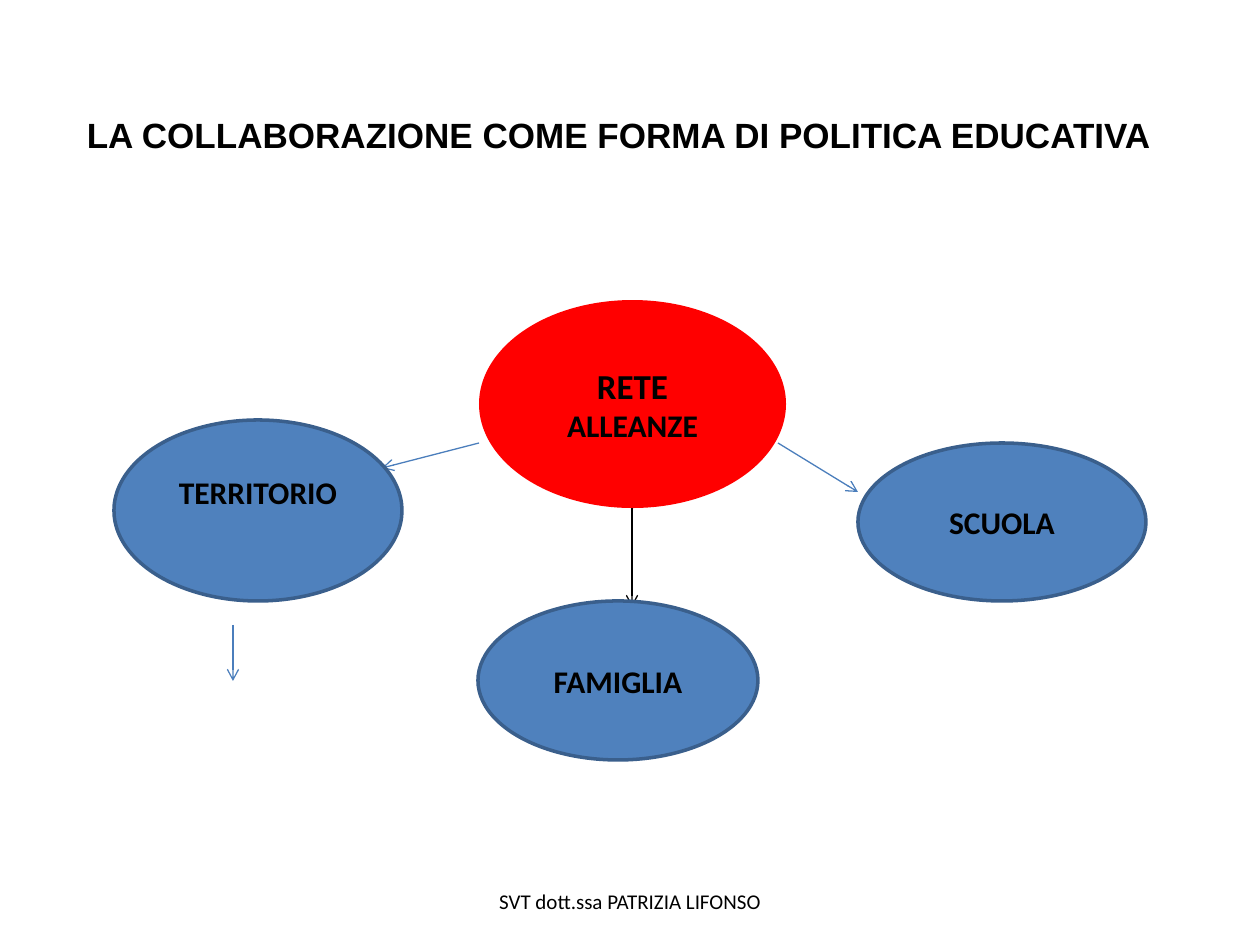
from lxml.etree import SubElement
from pptx import Presentation
from pptx.dml.color import RGBColor
from pptx.enum.shapes import MSO_CONNECTOR as Connector, MSO_SHAPE as Shape
from pptx.enum.text import MSO_ANCHOR as Anchor, PP_ALIGN as Align
from pptx.oxml.ns import qn
from pptx.util import Pt

EMU_PER_PX = 914400 / 126
BLACK = RGBColor(0x00, 0x00, 0x00)
RED = RGBColor(0xFF, 0x00, 0x00)
BLUE = RGBColor(0x4F, 0x81, 0xBD)
DARK_BLUE = RGBColor(0x3A, 0x5F, 0x8C)
ARROW_BLUE = RGBColor(0x4B, 0x7E, 0xBC)


def px(length):
    return round(length * EMU_PER_PX)


class AllianceSlide:
    body = {"name": "Calibri", "size": Pt(18), "bold": True}
    heading = {"name": "Arial", "size": Pt(20), "bold": True}
    footer = {"name": "Calibri", "size": Pt(12), "bold": False}

    def __init__(self, slide):
        self.shapes = slide.shapes

    def set_text(self, frame, runs, bottom_inset=6):
        """Fill a frame with one centred paragraph of (text, format) runs."""
        layout = {"word_wrap": True, "vertical_anchor": Anchor.MIDDLE,
                  "margin_bottom": px(bottom_inset)}
        for key, value in layout.items():
            setattr(frame, key, value)
        paragraph = frame.paragraphs[0]
        paragraph.alignment = Align.CENTER
        for text, style in runs:
            run = paragraph.add_run()
            run.text = text
            run.font.color.rgb = BLACK
            for key, value in style.items():
                setattr(run.font, key, value)

    def label(self, box, text, style):
        frame = self.shapes.add_textbox(*map(px, box)).text_frame
        self.set_text(frame, [(text, style)])

    def ellipse(self, box, runs, fill=BLUE, outline=DARK_BLUE, bottom_inset=6):
        node = self.shapes.add_shape(Shape.OVAL, *map(px, box))
        node.shadow.inherit = False
        node.fill.solid()
        node.fill.fore_color.rgb = fill
        if outline is None:
            node.line.fill.background()
        else:
            node.line.color.rgb = outline
            node.line.width = Pt(2)
        self.set_text(node.text_frame, runs, bottom_inset)

    def arrow(self, start, end, color=ARROW_BLUE):
        link = self.shapes.add_connector(
            Connector.STRAIGHT, *map(px, (*start, *end)))
        link.line.color.rgb = color
        link.line.width = Pt(0.75)
        properties = link.element.spPr
        SubElement(properties.find(qn("a:ln")), qn("a:tailEnd"), type="arrow")
        SubElement(properties, qn("a:effectLst"))


def main():
    deck = Presentation()
    deck.slide_width, deck.slide_height = px(1260), px(945)
    page = AllianceSlide(deck.slides.add_slide(deck.slide_layouts[6]))

    page.label((52, 55, 1134, 158),
               "LA COLLABORAZIONE COME FORMA DI POLITICA EDUCATIVA",
               page.heading)
    page.ellipse((479, 300, 307, 208),
                 [("RETE ", {**page.body, "size": Pt(20)}),
                  ("ALLEANZE", page.body)],
                 fill=RED, outline=None)

    page.arrow((479, 443), (382, 468))
    page.arrow((632, 508), (632, 607), BLACK)
    page.arrow((778, 443), (858, 492))

    partners = [
        ("SCUOLA", (858, 443, 288, 158), 6),
        ("FAMIGLIA", (478, 601, 280, 159), 6),
        ("TERRITORIO", (114, 420, 288, 181), 44),
    ]
    for partner, box, bottom_inset in partners:
        page.ellipse(box, [(partner, page.body)], bottom_inset=bottom_inset)

    page.label((430, 876, 400, 50), "SVT dott.ssa PATRIZIA LIFONSO",
               page.footer)
    page.arrow((233, 625), (233, 681))
    deck.save("out.pptx")


if __name__ == "__main__":
    main()
